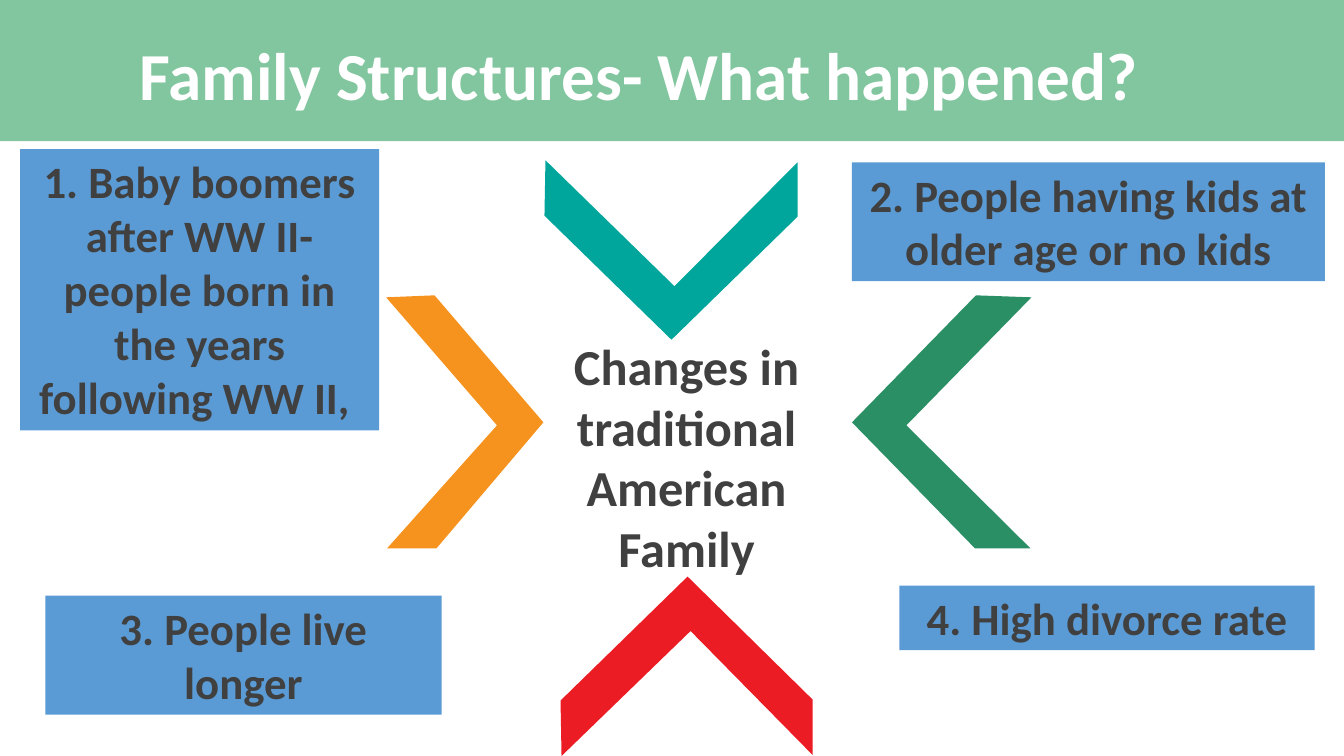
import pptx
import pptx.util
import pptx.dml.color
import pptx.enum.shapes
import pptx.enum.text
from pptx.util import Inches

COLORS = {
    "banner": "82C69F", "white": "FFFFFF", "text": "404040", "box": "5B9BD5",
    "red": "EC1C24", "teal": "00A69C", "orange": "F6921E", "green": "2B8F66",
}


def paint(sp, color):
    sp.shadow.inherit = False
    sp.fill.solid()
    sp.fill.fore_color.rgb = pptx.dml.color.RGBColor.from_string(COLORS[color])
    sp.line.fill.background()


def write(sp, text, size, color, inset=0.1):
    tf = sp.text_frame
    tf.text = text
    tf.word_wrap = True
    tf.auto_size = pptx.enum.text.MSO_AUTO_SIZE.SHAPE_TO_FIT_TEXT
    tf.vertical_anchor = pptx.enum.text.MSO_ANCHOR.TOP
    tf.margin_left = tf.margin_right = Inches(inset)
    tf.margin_top = tf.margin_bottom = Inches(0.05)
    p = tf.paragraphs[0]
    p.alignment = pptx.enum.text.PP_ALIGN.CENTER
    font = p.runs[0].font
    font.name = "Calibri"
    font.size = pptx.util.Pt(size)
    font.bold = True
    font.color.rgb = pptx.dml.color.RGBColor.from_string(COLORS[color])


prs = pptx.Presentation()
prs.slide_width, prs.slide_height = Inches(13.33), Inches(7.5)
s = prs.slides.add_slide(prs.slide_layouts[5])
RECT = pptx.enum.shapes.MSO_SHAPE.RECTANGLE

# Banner, placed behind the title
banner = s.shapes.add_shape(RECT, 0, 0, prs.slide_width, Inches(1.4))
paint(banner, "banner")
title = s.shapes.title
banner._element.addnext(title._element)
title.left, title.top = Inches(0.09), Inches(0.28)
title.width, title.height = Inches(12.65), Inches(0.91)
write(title, "Family Structures- What happened? ", 48, "white")

# Chevrons pointing at the centre
chevrons = [
    ("red", [(5.57, 7.5), (6.85, 6.26), (8.06, 7.49), (8.06, 6.94), (6.82, 5.72), (5.56, 6.95)]),
    ("teal", [(5.41, 1.59), (6.69, 2.84), (7.91, 1.61), (7.91, 2.15), (6.66, 3.37), (5.4, 2.14)]),
    ("orange", [(3.83, 2.95), (4.93, 4.22), (3.84, 5.44), (4.33, 5.44), (5.39, 4.19), (4.31, 2.93)]),
    ("green", [(10.23, 2.95), (8.99, 4.22), (10.22, 5.44), (9.67, 5.44), (8.45, 4.19), (9.68, 2.93)]),
]
for color, points in chevrons:
    points = [(Inches(x), Inches(y)) for x, y in points]
    builder = s.shapes.build_freeform(*points[0])
    builder.add_line_segments(points[1:], close=True)
    paint(builder.convert_to_shape(), color)

# Reasons
reasons = [
    ("1. Baby boomers after WW II- people born in the years following WW II, ", 0.2, 1.48, 3.56, 2.79),
    ("4. High divorce rate", 8.92, 5.81, 4.12, 0.64),
    ("3. People live longer", 0.45, 5.91, 3.93, 1.18),
    ("2. People having kids at older age or no kids", 8.45, 1.61, 4.69, 1.18),
]
for text, *place in reasons:
    sp = s.shapes.add_shape(RECT, *map(Inches, place))
    paint(sp, "box")
    write(sp, text, 32, "text", inset=0.15)

# Central topic
topic = s.shapes.add_textbox(Inches(5.17), Inches(3.28), Inches(3.28), Inches(2.52))
write(topic, "Changes in traditional American Family", 36, "text")

prs.save("out.pptx")
